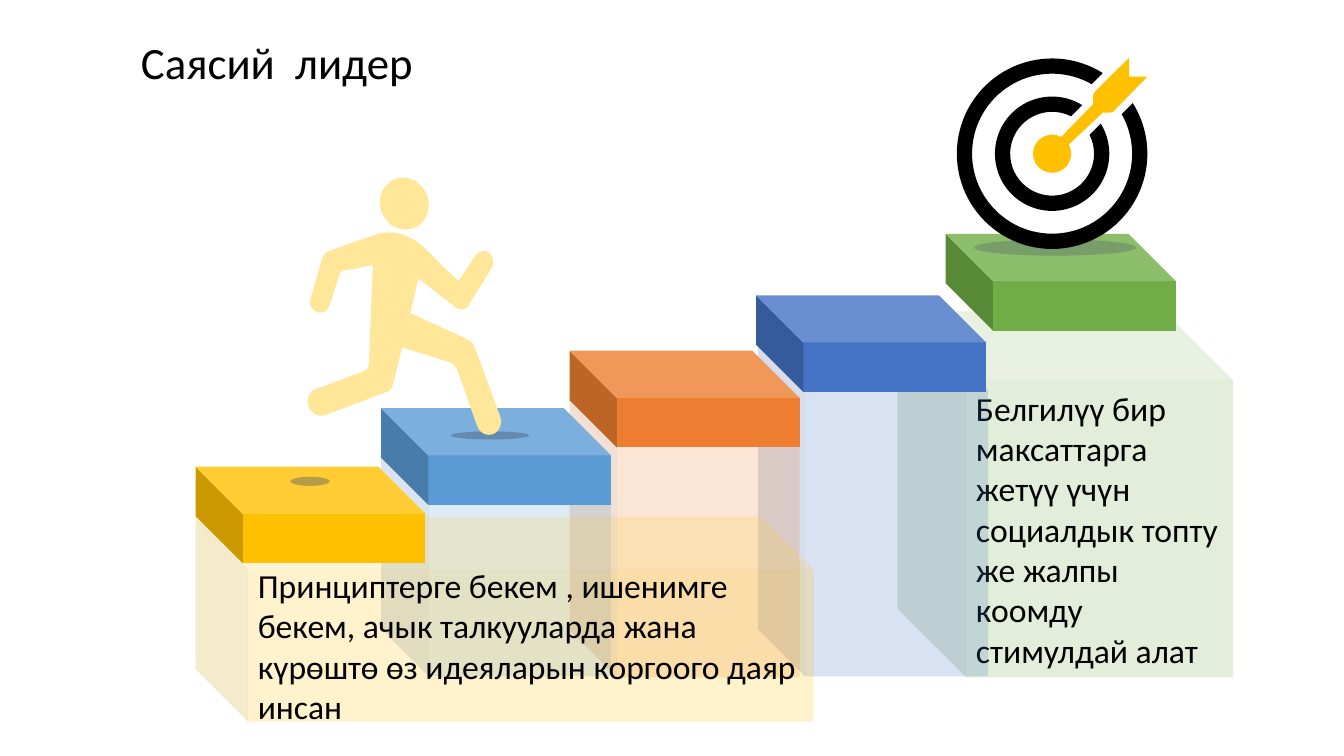
from math import asin, cos, pi, sin, tan

from lxml import etree
from pptx import Presentation
from pptx import util as u
from pptx.dml.color import RGBColor
from pptx.enum import shapes as kinds, text
from pptx.oxml.ns import qn

HUE = {"gold": "FFC000", "sky": "5B9BD5", "rust": "ED7D31", "blue": "4472C4",
       "green": "70AD47", "shade": "44546A", "ink": "000000", "skin": "FFE699"}

GOALS = "Белгилүү бир максаттарга жетүү үчүн социалдык топту же жалпы коомду стимулдай алат"
VALUES = ("Принциптерге бекем , ишенимге бекем, ачык талкууларда жана "
          "күрөштө өз идеяларын коргоого даяр инсан")

# hue, left and top of the step, box of the pillar, pillar depth, pillar text
STAIRS = [
    ("gold", 1.94, 4.63, (1.94, 5.13, 6.13, 2.03), .256, VALUES),
    ("sky", 3.78, 4.05, (3.78, 4.52, 2.28, 2.19), .216, ""),
    ("rust", 5.65, 3.48, (5.65, 3.95, 2.28, 2.77), .206, ""),
    ("blue", 7.5, 2.93, (7.52, 3.41, 2.28, 3.3), .203, ""),
    ("green", 9.38, 2.32, (8.9, 3.09, 3.33, 3.63), .205, GOALS),
]
STEP = (2.28, .96)

# Body outline in 1/200 of the figure's width: pairs are lines, sixes are curves
BODY = [
    (70, 93), (63, 94, 57, 95, 51, 97), (41, 98), (38, 99, 37, 101, 36, 104),
    (27, 133), (25, 137, 23, 140, 19, 140), (15, 140, 12, 139, 9, 135),
    (7, 132, 7, 129, 8, 126), (20, 85), (21, 82, 23, 80, 26, 79), (72, 63),
    (83, 59, 95, 60, 105, 65), (112, 68, 118, 73, 124, 79), (142, 97), (153, 107),
    (154, 109, 156, 109, 156, 107), (172, 83), (174, 80, 178, 79, 181, 79),
    (185, 80, 188, 83, 189, 87), (190, 91, 189, 94, 187, 97), (164, 134),
    (161, 138, 156, 138, 152, 135), (116, 107), (115, 106), (107, 141), (112, 143),
    (158, 164), (164, 167), (167, 168, 170, 171, 171, 175), (196, 243),
    (198, 248, 197, 253, 194, 257), (189, 263, 180, 263, 175, 256),
    (174, 255, 174, 253, 173, 252), (154, 198), (152, 193, 149, 190, 145, 189),
    (100, 175), (99, 174), (90, 211), (89, 215, 87, 218, 83, 219), (22, 242),
    (15, 244, 8, 240, 6, 233), (3, 226, 7, 218, 13, 216), (59, 199),
    (65, 197, 66, 195, 66, 189), (67, 163), (68, 137), (69, 113),
]

# Shaft and feathers, in radii of the target from its centre
DART = [(.1, -.18), (.43, -.52), (.43, -.61), (.44, -.64), (.81, -1.01), (.81, -.81),
        (1, -.81), (.64, -.44), (.61, -.43), (.53, -.43), (.18, -.1)]


def paint(shape, hue, alpha=100):
    shape.shadow.inherit = False
    shape.line.fill.background()
    shape.fill.solid()
    shape.fill.fore_color.rgb = RGBColor.from_string(HUE[hue])
    if alpha < 100:
        tone = shape._element.spPr.find(qn("a:solidFill"))[0]
        etree.SubElement(tone, qn("a:alpha"), val=str(alpha * 1000))


def add(slide, kind, box, hue, alpha=100):
    shape = slide.shapes.add_shape(kind, *map(u.Inches, box))
    paint(shape, hue, alpha)
    return shape


def oval(slide, box, hue, alpha=100):
    return add(slide, kinds.MSO_SHAPE.OVAL, box, hue, alpha)


def cube(slide, box, depth, hue, alpha=100):
    """Cube whose side face is on the left."""
    shape = add(slide, kinds.MSO_SHAPE.CUBE, box, hue, alpha)
    shape.adjustments[0] = depth
    shape._element.spPr.xfrm.set("flipH", "1")
    return shape


def outline(slide, marks, left, top, unit, hue):
    """Draw a closed shape of lines (pairs) and cubic curves (sixes)."""
    points = [(u.Inches(left + x * unit), u.Inches(top + y * unit))
              for mark in marks for x, y in zip(mark[::2], mark[1::2])]
    pen = slide.shapes.build_freeform(*points[0])
    pen.add_line_segments(points[1:])
    shape = pen.convert_to_shape()
    lines = iter(list(shape._element.iter(qn("a:lnTo"))))
    for mark in marks[1:]:
        line = next(lines)
        if len(mark) == 6:
            curve = etree.Element(qn("a:cubicBezTo"))
            line.addprevious(curve)
            for part in (line, next(lines), next(lines)):
                curve.append(part[0])
                part.getparent().remove(part)
    paint(shape, hue)


def write(shape, words, size, anchor):
    frame = shape.text_frame
    for name, value in {"word_wrap": True, "vertical_anchor": anchor}.items():
        setattr(frame, name, value)
    par = frame.paragraphs[0]
    par.alignment = text.PP_ALIGN.LEFT
    run = par.add_run()
    run.text = words
    for name, value in {"size": u.Pt(size), "name": "Calibri"}.items():
        setattr(run.font, name, value)
    run.font.color.rgb = RGBColor.from_string(HUE["ink"])


def title(slide, box):
    label = slide.shapes.add_textbox(*map(u.Inches, box))
    write(label, "Саясий  лидер", 32, text.MSO_ANCHOR.TOP)


def stairs(slide):
    for hue, _, _, box, depth, words in reversed(STAIRS):
        pillar = cube(slide, box, depth, hue, 20)
        if words:
            write(pillar, words, 24, text.MSO_ANCHOR.MIDDLE)
    for hue, left, top, *_ in STAIRS:
        cube(slide, (left, top, *STEP), .488, hue)


def arc(rad, half, back=False):
    """Curves round a circle left open by twice half towards the upper right."""
    gap, count = asin(half / rad), 6
    start, step = gap - pi / 4, 2 * (pi - gap) / count
    if back:
        start, step = -gap - pi / 4, -step
    pull = 4 / 3 * tan(step / 4)
    marks = [(rad * cos(start), rad * sin(start))]
    for i in range(count):
        a, b = start + i * step, start + (i + 1) * step
        marks.append((rad * (cos(a) - pull * sin(a)), rad * (sin(a) + pull * cos(a)),
                      rad * (cos(b) + pull * sin(b)), rad * (sin(b) - pull * cos(b)),
                      rad * cos(b), rad * sin(b)))
    return marks


def target(slide, box):
    left, top, size = box
    rad = size / 2
    spot = (left + rad, top + rad, rad)
    oval(slide, (left + .09 * size, top + .95 * size, .85 * size, .085 * size), "shade", 30)
    for outer, inner, half in ((1, .84, .223), (.6, .44, .137)):
        outline(slide, arc(outer, half) + arc(inner, half, True), *spot, "ink")
    outline(slide, arc(.2, .06) + DART, *spot, "gold")


def runner(slide, box):
    left, top, width = box
    unit = width / 200
    oval(slide, (left + 147 * unit, top + 258 * unit, 78 * unit, 8 * unit), "shade", 40)
    outline(slide, BODY, left, top, unit, "skin")
    head = oval(slide, (left + 77 * unit, top + 6 * unit, 48 * unit, 52 * unit), "skin")
    head.rotation = 340.1


def main():
    deck = Presentation()
    deck.slide_width, deck.slide_height = u.Inches(13.33), u.Inches(7.5)
    slide = deck.slides.add_slide(deck.slide_layouts[6])
    stairs(slide)
    target(slide, (9.49, .58, 1.89))
    title(slide, (1.3, .3, 7.15, .64))
    runner(slide, (3, 1.7, 2))
    oval(slide, (2.88, 4.73, .39, .09), "shade", 40)
    deck.save("out.pptx")


if __name__ == "__main__":
    main()
